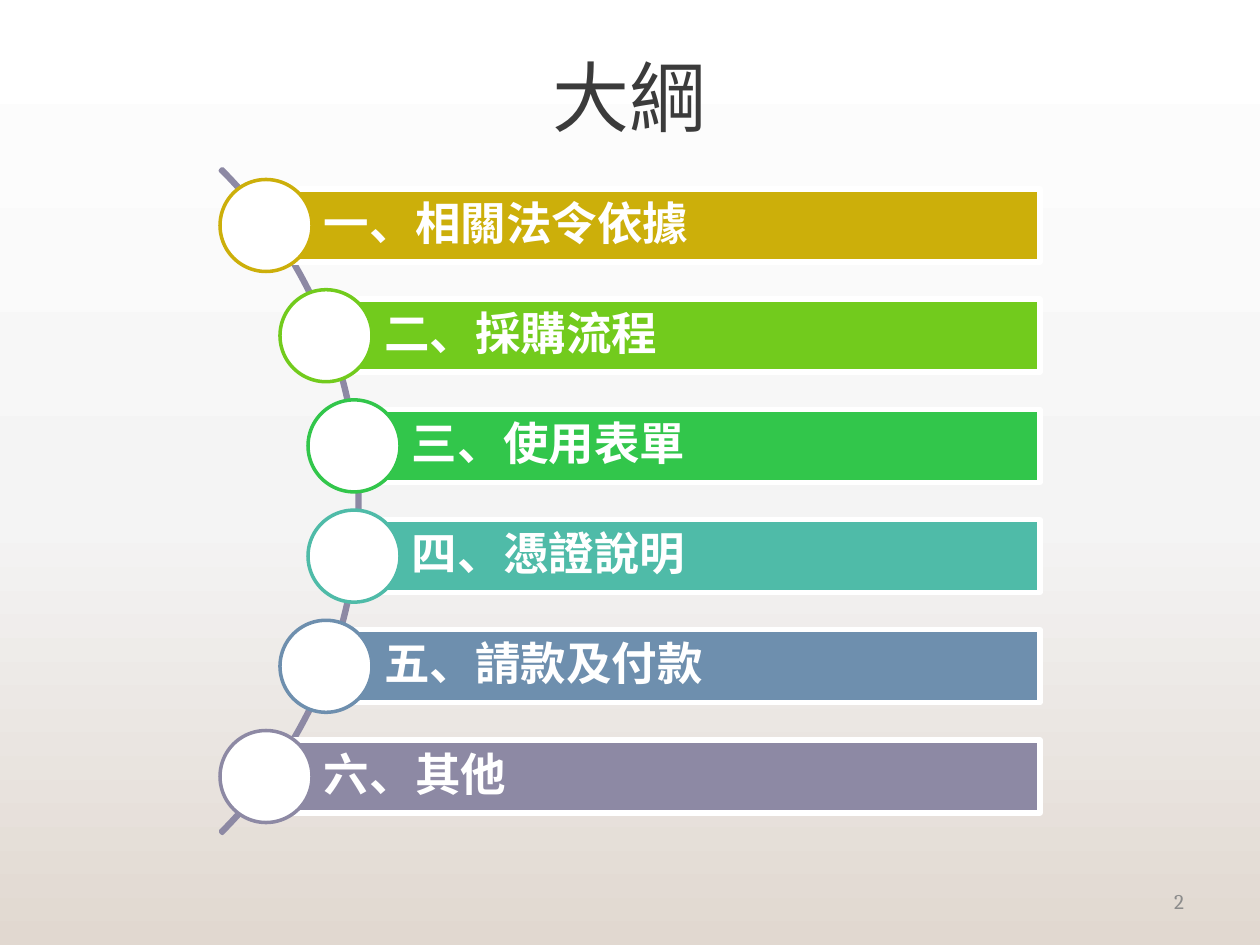
from lxml import etree
from pptx import Presentation
from pptx import util as u
from pptx.dml.color import RGBColor
from pptx.enum import shapes, text
from pptx.oxml import ns

PX = 914400 // 126
WHITE = RGBColor(0xFF, 0xFF, 0xFF)
DARK = RGBColor(0x3B, 0x3B, 0x3B)
GREY = RGBColor(0x8C, 0x8C, 0x8C)
GOLD = RGBColor(0xCC, 0xAF, 0x0A)
LIME = RGBColor(0x72, 0xCB, 0x1D)
GREEN = RGBColor(0x32, 0xC6, 0x4B)
TEAL = RGBColor(0x4F, 0xBB, 0xA8)
BLUE = RGBColor(0x6E, 0x8F, 0xAE)
MAUVE = RGBColor(0x8D, 0x89, 0xA4)
BACKDROP = [(0, WHITE), (55, RGBColor(0xF4, 0xF4, 0xF4)), (100, RGBColor(0xE1, 0xD8, 0xD0))]

CJK = "Noto Sans CJK SC"
# Heading, colour and indent of each bar along the arc
TOPICS = [
    ("一、相關法令依據", GOLD, 0),
    ("二、採購流程", LIME, 60),
    ("三、使用表單", GREEN, 88),
    ("四、憑證說明", TEAL, 88),
    ("五、請款及付款", BLUE, 60),
    ("六、其他", MAUVE, 0),
]


def emu(*lengths):
    return [round(n * PX) for n in lengths]


def write(sp, words, *, size, color, font=CJK, bold=False,
          align=text.PP_ALIGN.LEFT, insets=(13, 6, 13, 6), spacing=1.0, after=0):
    tf = sp.text_frame
    tf.word_wrap = True
    tf.vertical_anchor = text.MSO_ANCHOR.MIDDLE
    tf.margin_left, tf.margin_top, tf.margin_right, tf.margin_bottom = emu(*insets)
    p = tf.paragraphs[0]
    p.alignment, p.line_spacing, p.space_after = align, spacing, u.Pt(after)
    r = p.add_run()
    r.text = words
    r.font.size, r.font.bold = u.Pt(size), bold
    r.font.color.rgb = color
    r.font.name = font
    etree.SubElement(r.font._element, ns.qn("a:ea"), typeface=font)


def add_shape(s, kind, box, line, width, fill=None):
    sp = s.shapes.add_shape(kind, *emu(*box))
    sp.shadow.inherit = False
    if fill is None:
        sp.fill.background()
    else:
        sp.fill.solid()
        sp.fill.fore_color.rgb = fill
    sp.line.color.rgb = line
    sp.line.width = u.Pt(width)
    return sp


def paint_background(s):
    fill = s.background.fill
    fill.gradient()
    grad = s.background._cSld.find(".//" + ns.qn("a:gradFill"))
    for child in list(grad):
        grad.remove(child)
    stops = etree.SubElement(grad, ns.qn("a:gsLst"))
    for percent, color in BACKDROP:
        stop = etree.SubElement(stops, ns.qn("a:gs"), pos=str(percent * 1000))
        etree.SubElement(stop, ns.qn("a:srgbClr"), val=str(color))
    etree.SubElement(grad, ns.qn("a:lin"), ang="5400000", scaled="0")


def add_label(s, box, words, **fmt):
    write(s.shapes.add_textbox(*emu(*box)), words, **fmt)


def add_outline(s, left, top, width, height):
    # Arc behind the bars, centred on the list's height
    size = 940
    arc = add_shape(s, shapes.MSO_SHAPE.BLOCK_ARC,
                    (left - 846, top + (height - size) / 2, size, size), MAUVE, 2)
    for i, value in enumerate((189, 27, 0.003)):
        arc.adjustments[i] = value

    # Evenly spaced bars, each with a circle centred on its left edge
    bar_h, dot = 73, 92
    pitch = (height - bar_h) / (len(TOPICS) - 1)
    for i, (words, color, indent) in enumerate(TOPICS):
        x, y = left + indent, top + i * pitch
        bar = add_shape(s, shapes.MSO_SHAPE.RECTANGLE,
                        (x, y, width - indent, bar_h), WHITE, 3, color)
        write(bar, words, size=26, color=WHITE, bold=True,
              insets=(58, 9, 9, 9), spacing=0.9, after=9)
        add_shape(s, shapes.MSO_SHAPE.OVAL,
                  (x - dot / 2, y + (bar_h - dot) / 2, dot, dot), color, 2, WHITE)


def main():
    prs = Presentation()
    prs.slide_width, prs.slide_height = emu(1260, 945)
    s = prs.slides.add_slide(prs.slide_layouts[6])
    paint_background(s)
    # Title and page number
    add_label(s, (63, 38, 1134, 115), "大綱", size=44, color=DARK,
              align=text.PP_ALIGN.CENTER)
    add_label(s, (903, 876, 294, 50), "2", size=12, color=GREY, font="Cambria",
              align=text.PP_ALIGN.RIGHT)
    # Outline list
    add_outline(s, 266, 189, 774, 624)
    prs.save("out.pptx")


if __name__ == "__main__":
    main()
